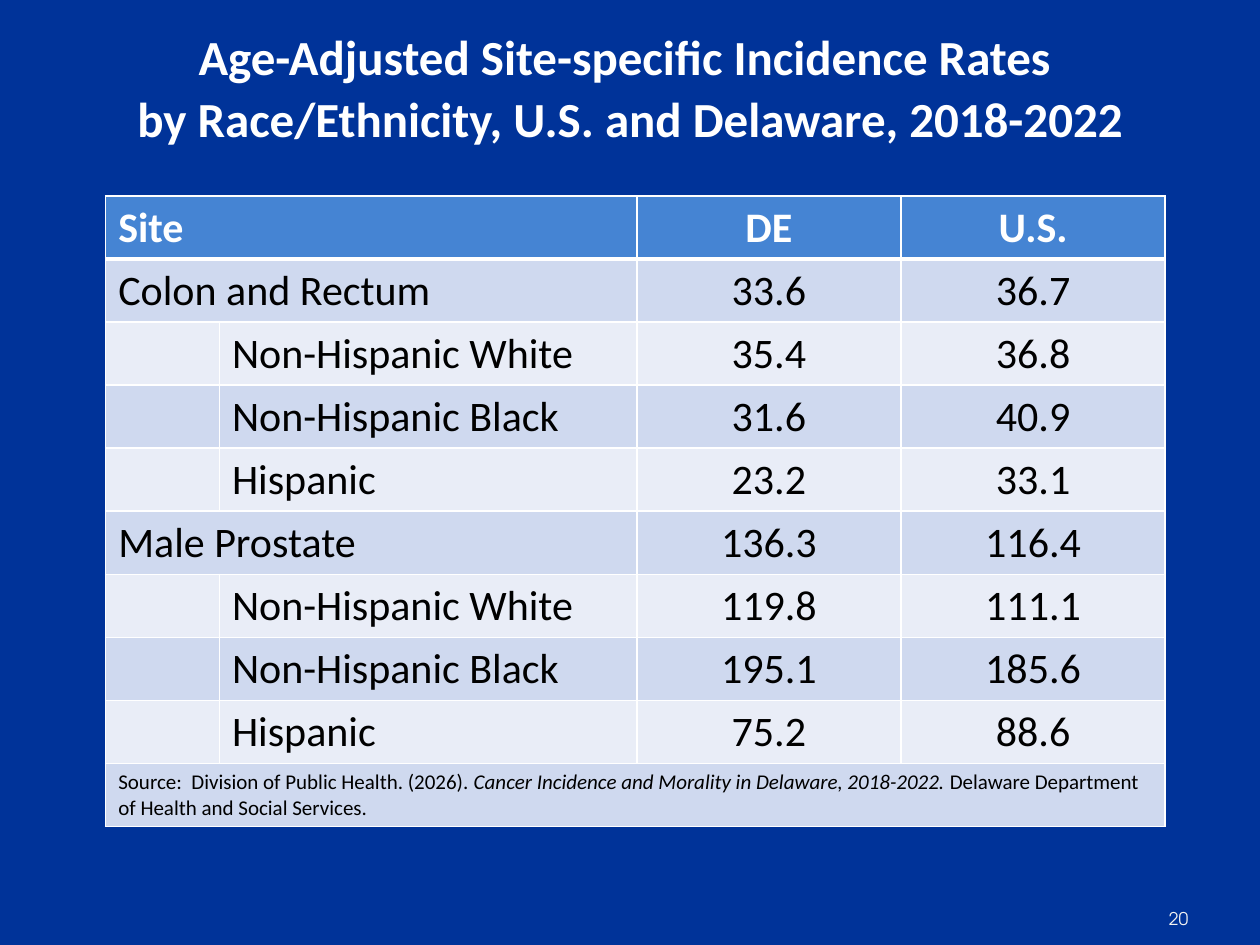
from lxml.etree import SubElement
from pptx import Presentation
from pptx.dml.color import RGBColor
from pptx.enum.text import MSO_ANCHOR, MSO_AUTO_SIZE, PP_ALIGN
from pptx.oxml.ns import qn
from pptx.util import Pt

WHITE, BLACK, NAVY = "FFFFFF", "000000", "003399"
HEADER_BLUE, BAND_DARK, BAND_LIGHT = "4584D3", "CFD9EF", "E9EDF7"

COLUMN_WIDTHS = [65, 238.5, 151, 151]
ROW_HEIGHT = 36
SITES = [
    ("Colon and Rectum", "33.6", "36.7", [
        ("Non-Hispanic White", "35.4", "36.8"),
        ("Non-Hispanic Black", "31.6", "40.9"),
        ("Hispanic", "23.2", "33.1")]),
    ("Male Prostate", "136.3", "116.4", [
        ("Non-Hispanic White", "119.8", "111.1"),
        ("Non-Hispanic Black", "195.1", "185.6"),
        ("Hispanic", "75.2", "88.6")]),
]
SOURCE_PARTS = [
    ("Source:  Division of Public Health. (2026).", False),
    (" Cancer Incidence and Morality in Delaware, 2018-2022. ", True),
    ("Delaware Department of Health and Social Services.", False),
]


def color(hex_value):
    """Turn a hex string into a colour."""
    return RGBColor.from_string(hex_value)


def write(frame, text, size=24, font="Calibri", fill=BLACK, bold=False,
          italic=False, align=PP_ALIGN.LEFT, line_spacing=None):
    """Add formatted text to the first paragraph, with \\v as a line break."""
    paragraph = frame.paragraphs[0]
    paragraph.alignment = align
    if line_spacing:
        paragraph.line_spacing = Pt(line_spacing)
    for index, line in enumerate(text.split("\v")):
        if index:
            paragraph.add_line_break()
        run = paragraph.add_run()
        run.text = line
        run.font.size, run.font.name = Pt(size), font
        run.font.bold, run.font.italic = bold, italic
        run.font.color.rgb = color(fill)


def place(box, left, top, width, height):
    """Set the position and size of a shape in points."""
    box.left, box.top, box.width, box.height = map(Pt, (left, top, width, height))


def style_cell(cell, background, top=1, bottom=1):
    """Give a cell white borders and a solid background."""
    properties = cell._tc.get_or_add_tcPr()
    for side, width in (("L", 1), ("R", 1), ("T", top), ("B", bottom)):
        border = SubElement(properties, qn(f"a:ln{side}"), w=str(Pt(width)))
        line_fill = SubElement(border, qn("a:solidFill"))
        SubElement(line_fill, qn("a:srgbClr"), val=WHITE)
    cell.fill.solid()
    cell.fill.fore_color.rgb = color(background)


def add_title(slide):
    """Fill the title placeholder."""
    title = slide.shapes.title
    place(title, 0, 1, 720, 96)
    frame = title.text_frame
    frame.word_wrap = True
    frame.auto_size = MSO_AUTO_SIZE.NONE
    frame.vertical_anchor = MSO_ANCHOR.MIDDLE
    write(frame, "Age-Adjusted Site-specific Incidence Rates \v"
          "by Race/Ethnicity, U.S. and Delaware, 2018-2022",
          size=28, fill=WHITE, bold=True, align=PP_ALIGN.CENTER, line_spacing=35)


def add_page_number(slide):
    """Add the page number at the lower right."""
    number = slide.shapes.add_textbox(Pt(666), Pt(510.5), Pt(44), Pt(29))
    frame = number.text_frame
    frame.word_wrap = True
    frame.vertical_anchor = MSO_ANCHOR.MIDDLE
    frame.margin_left = Pt(2)
    frame.margin_right = frame.margin_top = frame.margin_bottom = Pt(3.6)
    write(frame, "20", size=10, font="TeX Gyre Adventor", fill="F2F2F2")


def fill_rates_row(table, row, label, rates, indented=False, **text_format):
    """Write a label and its rates, merging the label cells unless indented."""
    if not indented:
        table.cell(row, 0).merge(table.cell(row, 1))
    write(table.cell(row, int(indented)).text_frame, label, **text_format)
    for column, rate in enumerate(rates, start=2):
        write(table.cell(row, column).text_frame, rate,
              align=PP_ALIGN.CENTER, **text_format)


def add_rates_table(slide):
    """Add the table of incidence rates with its source row."""
    row_count = 2 + sum(1 + len(groups) for *_, groups in SITES)
    table = slide.shapes.add_table(
        row_count, len(COLUMN_WIDTHS), Pt(60.4), Pt(112),
        Pt(sum(COLUMN_WIDTHS)), Pt(ROW_HEIGHT * row_count)).table
    table.first_row = table.horz_banding = False
    for column, width in zip(table.columns, COLUMN_WIDTHS):
        column.width = Pt(width)

    for index, row in enumerate(table.rows):
        row.height = Pt(ROW_HEIGHT)
        band = BAND_DARK if index % 2 else BAND_LIGHT
        for cell in row.cells:
            style_cell(cell, band if index else HEADER_BLUE,
                       top=3 if index == 1 else 1, bottom=1 if index else 3)

    fill_rates_row(table, 0, "Site", ("DE", "U.S."), fill=WHITE, bold=True)
    row = 1
    for site, delaware, national, groups in SITES:
        fill_rates_row(table, row, site, (delaware, national))
        for offset, (group, *rates) in enumerate(groups, start=1):
            fill_rates_row(table, row + offset, group, rates, indented=True)
        row += 1 + len(groups)

    source = table.cell(row, 0)
    source.merge(table.cell(row, len(COLUMN_WIDTHS) - 1))
    for text, italic in SOURCE_PARTS:
        write(source.text_frame, text, size=12, italic=italic)


def main():
    """Build and save the slide."""
    deck = Presentation()
    deck.slide_width, deck.slide_height = Pt(720), Pt(540)
    slide = deck.slides.add_slide(deck.slide_layouts.get_by_name("Title Only"))
    slide.background.fill.solid()
    slide.background.fill.fore_color.rgb = color(NAVY)
    add_title(slide)
    add_page_number(slide)
    add_rates_table(slide)
    deck.save("out.pptx")


if __name__ == "__main__":
    main()
